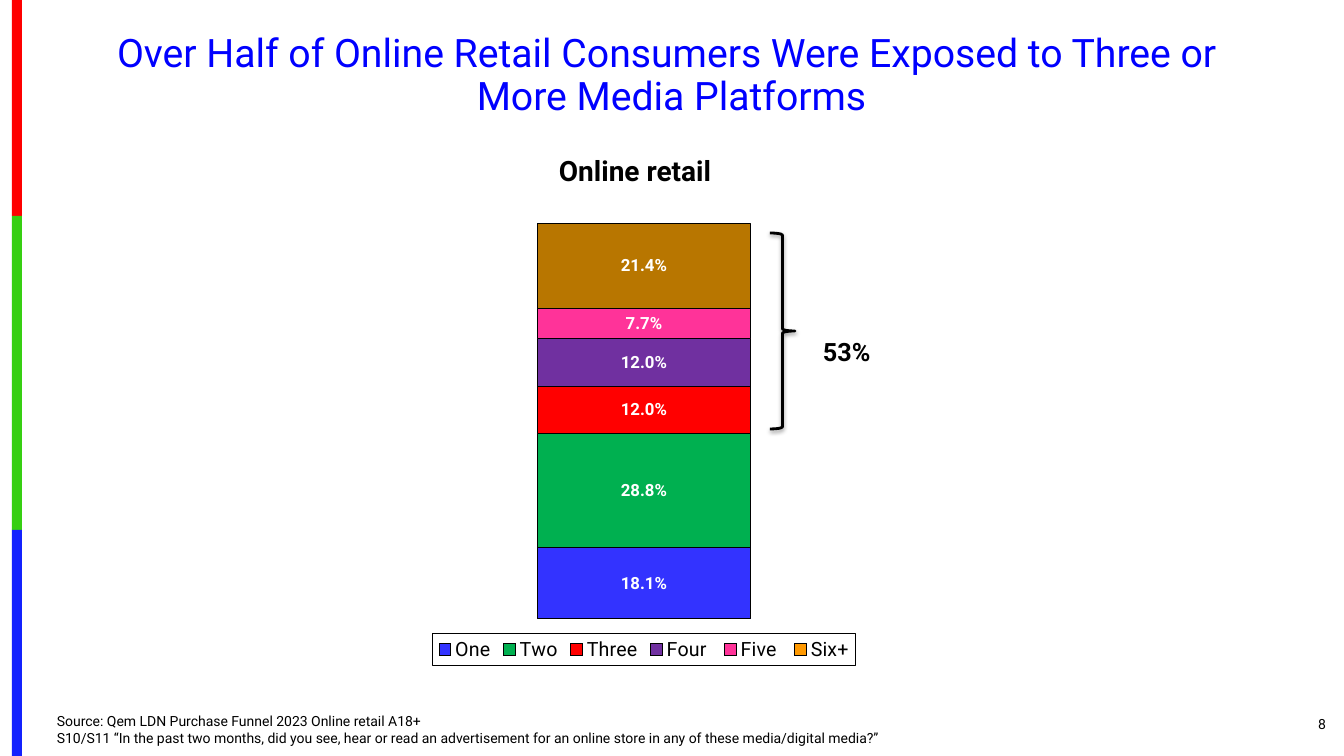
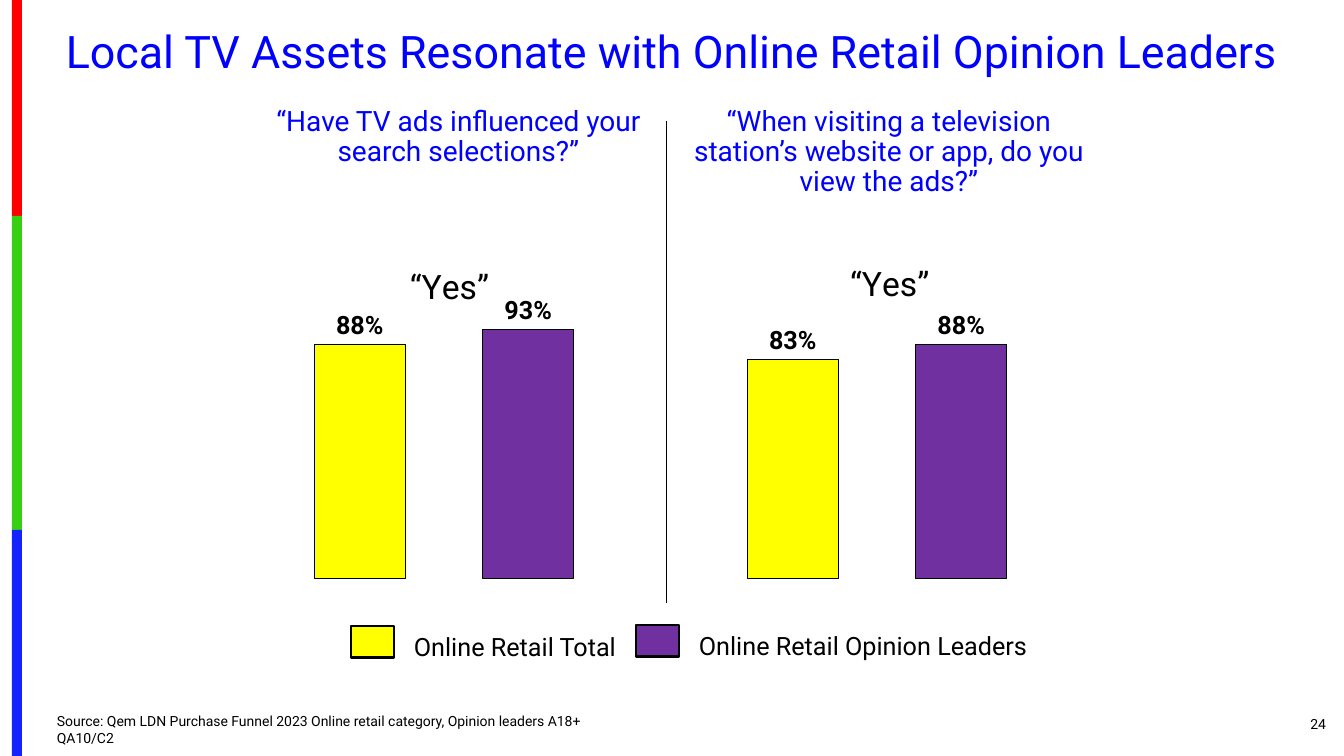
from copy import deepcopy

from pptx import Presentation
from pptx.chart.data import CategoryChartData as Data
from pptx.dml.color import RGBColor as Rgb
from pptx.enum.chart import XL_CHART_TYPE as Kind, XL_LABEL_POSITION as Spot
from pptx.enum.chart import XL_LEGEND_POSITION as Side
from pptx.enum.shapes import MSO_CONNECTOR as Wire, MSO_SHAPE as Form
from pptx.enum.text import MSO_ANCHOR as Anchor, MSO_AUTO_SIZE as Fit
from pptx.enum.text import PP_ALIGN as Align
from pptx.oxml import parse_xml
from pptx.oxml.ns import nsdecls, qn
from pptx.util import Emu, Pt

SCALE = 914400 / 100.8
WIDE, HIGH = 1344, 756
FONT = "Roboto"
HUES = {
    "black": "000000", "white": "FFFFFF", "title": "0000FF",
    "red band": "FE0000", "green band": "36CF12", "blue band": "1322FE",
    "blue": "3333FF", "green": "00B050", "red": "FF0000",
    "purple": "7030A0", "pink": "FF3399", "orange": "FF9900",
    "brown": "B87600", "yellow": "FFFF00",
}
BANDS = [("red band", 0, 216), ("green band", 216, 530), ("blue band", 530, HIGH)]


def px(*sizes):
    return [Emu(round(size * SCALE)) for size in sizes]


def hue(name):
    return Rgb.from_string(HUES[name])


def style(font, size, color="black", bold=False):
    font.name, font.size, font.bold = FONT, Pt(size), bold
    font.color.rgb = hue(color)


def paint(item, fill, line=None, width=0.75):
    """Fill and outline anything that has fill and line."""
    if fill:
        item.fill.solid()
        item.fill.fore_color.rgb = hue(fill)
    else:
        item.fill.background()
    if line:
        item.line.color.rgb = hue(line)
        item.line.width = Pt(width)
    else:
        item.line.fill.background()


def write(frame, text, size=18, color="black", bold=False, align=Align.LEFT,
          lead=None, anchor=Anchor.TOP, wrap=True):
    """Set text; a newline starts a paragraph, a \\v breaks the line."""
    frame.auto_size = Fit.NONE
    frame.word_wrap = wrap
    frame.vertical_anchor = anchor
    for i, line in enumerate(text.split("\n")):
        para = frame.add_paragraph() if i else frame.paragraphs[0]
        para.text = line
        para.alignment = align
        if lead:
            para.line_spacing = lead
        for run in para.runs:
            style(run.font, size, color, bold)
        for br in para._p.findall(qn("a:br")):
            br.append(deepcopy(para.runs[0]._r.rPr))


def place(node, index, x, y, w=None, h=None):
    """Give a chart part a manual layout, in fractions of the chart."""
    for old in node.findall(qn("c:layout")):
        node.remove(old)
    inner = '<c:layoutTarget val="inner"/>' if node.tag == qn("c:plotArea") else ""
    modes = '<c:xMode val="edge"/><c:yMode val="edge"/>'
    sizes = "".join(f'<c:{key} val="{val}"/>' for key, val in
                    zip("xywh", (x, y, w, h)) if val is not None)
    node.insert(index, parse_xml(
        f'<c:layout {nsdecls("c")}><c:manualLayout>{inner}{modes}{sizes}'
        "</c:manualLayout></c:layout>"))


class Deck:
    def __init__(self):
        self.show = Presentation()
        self.show.slide_width, self.show.slide_height = px(WIDE, HIGH)
        self.slide = None

    def page(self, title, box, size, source, number):
        """Start a slide with its bands, title, source and page number."""
        self.slide = self.show.slides.add_slide(self.show.slide_layouts[5])
        for color, top, end in BANDS:
            self.shape(Form.RECTANGLE, (12, top, 10, end - top), color)
        head = self.slide.shapes.title
        head.left, head.top, head.width, head.height = px(*box)
        write(head.text_frame, title, size=size, color="title",
              align=Align.CENTER, lead=0.9)
        self.text(source, (47, 708, 1000, 44), size=10)
        self.text(number, (1227, 704, 109, 40), size=10, align=Align.RIGHT,
                  anchor=Anchor.MIDDLE)

    def text(self, text, box, **form):
        frame = self.slide.shapes.add_textbox(*px(*box)).text_frame
        write(frame, text, **form)

    def shape(self, form, box, fill=None, line=None, width=2):
        item = self.slide.shapes.add_shape(form, *px(*box))
        item.shadow.inherit = False
        paint(item, fill, line, width)
        return item

    def brace(self, box):
        item = self.shape(Form.RIGHT_BRACE, box, line="black")
        item._element.spPr.find(qn("a:effectLst")).append(parse_xml(
            f'<a:outerShdw {nsdecls("a")} blurRad="39370" dist="20320" '
            'dir="5400000" rotWithShape="0"><a:srgbClr val="000000">'
            '<a:alpha val="38000"/></a:srgbClr></a:outerShdw>'))

    def rule(self, x, top, end):
        line = self.slide.shapes.add_connector(Wire.STRAIGHT, *px(x, top, x, end))
        line.line.color.rgb = hue("black")
        line.line.width = Pt(0.75)
        line._element.spPr.append(parse_xml(f'<a:effectLst {nsdecls("a")}/>'))

    def chart(self, kind, box, cats, rows, span, gap, plot):
        """Add a bare column chart; rows are (name, values, colour)."""
        data = Data()
        data.categories = cats
        for name, vals, _ in rows:
            data.add_series(name, vals)
        chart = self.slide.shapes.add_chart(kind, *px(*box), data).chart
        style(chart.font, 10)
        chart.has_title = chart.has_legend = False
        axis = chart.value_axis
        axis.minimum_scale, axis.maximum_scale = span
        axis.has_major_gridlines = False
        axis.visible = chart.category_axis.visible = False
        bars = chart.plots[0]
        bars.vary_by_categories = False
        bars.gap_width = gap
        for row, (_, _, color) in zip(bars.series, rows):
            row.invert_if_negative = False
            paint(row.format, color, "black")
        place(chart._chartSpace.chart.plotArea, 0, *plot)
        return chart

    def label(self, chart, form, spot, size, color):
        bars = chart.plots[0]
        bars.has_data_labels = True
        tags = bars.data_labels
        tags.show_value = True
        tags.number_format, tags.number_format_is_linked = form, False
        tags.position = spot
        style(tags.font, size, color, True)

    def legend(self, chart, size, spot):
        chart.has_legend = True
        key = chart.legend
        key.position, key.include_in_layout = Side.BOTTOM, False
        style(key.font, size)
        node = key._element
        place(node, 1, *spot)
        node.find(qn("c:txPr")).addprevious(parse_xml(
            f'<c:spPr {nsdecls("c", "a")}><a:solidFill><a:srgbClr val="{HUES["white"]}"/>'
            f'</a:solidFill><a:ln w="9525"><a:solidFill><a:srgbClr val="{HUES["black"]}"/>'
            "</a:solidFill></a:ln></c:spPr>"))

    def reach(self):
        self.page("Over Half of Online Retail Consumers Were Exposed to Three or \v"
                  "More Media Platforms", (27, 29, 1289, 96), 28,
                  "Source: Qem LDN Purchase Funnel 2023 Online retail A18+\n"
                  "S10/S11 “In the past two months, did you see, hear or read an "
                  "advertisement for an online store in any of these "
                  "media/digital media?”", "8")
        rows = [("One", [0.181], "blue"), ("Two", [0.288], "green"),
                ("Three", [0.12], "red"), ("Four ", [0.12], "purple"),
                ("Five ", [0.077], "pink"), ("Six+", [0.214], "orange")]
        chart = self.chart(Kind.COLUMN_STACKED, (366, 134, 556, 533), ["1"], rows,
                           (0, 1.2), 150, (0.02, 0.02, 0.96, 0.89))
        chart.plots[0].overlap = 100
        paint(chart.plots[0].series[5].points[0].format, "brown", "black")
        self.label(chart, "0.0%", Spot.CENTER, 12, "white")
        self.legend(chart, 14, (0.12, 0.94, 0.76, 0.06))
        self.text("Online retail", (549, 149, 195, 44), size=20, bold=True, wrap=False)
        self.brace((770, 233, 25, 196))
        self.text("53%", (813, 331, 91, 40), bold=True)

    def views(self):
        self.page("Local TV Assets Resonate with Online Retail Opinion Leaders",
                  (46, 25, 1252, 59), 32,
                  "Source: Qem LDN Purchase Funnel 2023 Online retail category, "
                  "Opinion leaders A18+\nQA10/C2", "24")
        self.rule(667, 121, 603)
        asks = [
            ("“Have TV ads influenced your search selections?”",
             (261, 102, 395, 72), 261, [0.88, 0.93], (0.39, 0.05)),
            ("“When visiting a television station’s website or app, do you view the ads?”",
             (681, 102, 416, 102), 694, [0.83, 0.88], (0.41, 0.04)),
        ]
        for ask, box, left, vals, spot in asks:
            chart = self.chart(Kind.COLUMN_CLUSTERED, (left, 240, 366, 360),
                               ["1", "2"], [("Series 1", vals, "blue")],
                               (0.1, 1), 85, (0.04, 0.19, 0.92, 0.75))
            for i, color in enumerate(("yellow", "purple")):
                paint(chart.plots[0].series[0].points[i].format, color, "black")
            self.label(chart, "0%", Spot.OUTSIDE_END, 18, "black")
            chart.has_title = True
            write(chart.chart_title.text_frame, "“Yes”", size=24, align=Align.CENTER)
            place(chart.chart_title._element, 1, *spot)
            self.text(ask, box, size=20, color="title", align=Align.CENTER, lead=0.9)
        keys = [("Online Retail Total", "yellow", 351, 626, 224),
                ("Online Retail Opinion Leaders", "purple", 636, 625, 352)]
        for name, color, left, top, width in keys:
            self.shape(Form.RECTANGLE, (left, top, 43, 32), color, "black")
            self.text(name, (left + 53, top, width, 40), wrap=False)


def main():
    deck = Deck()
    deck.reach()
    deck.views()
    deck.show.save("out.pptx")


if __name__ == "__main__":
    main()
